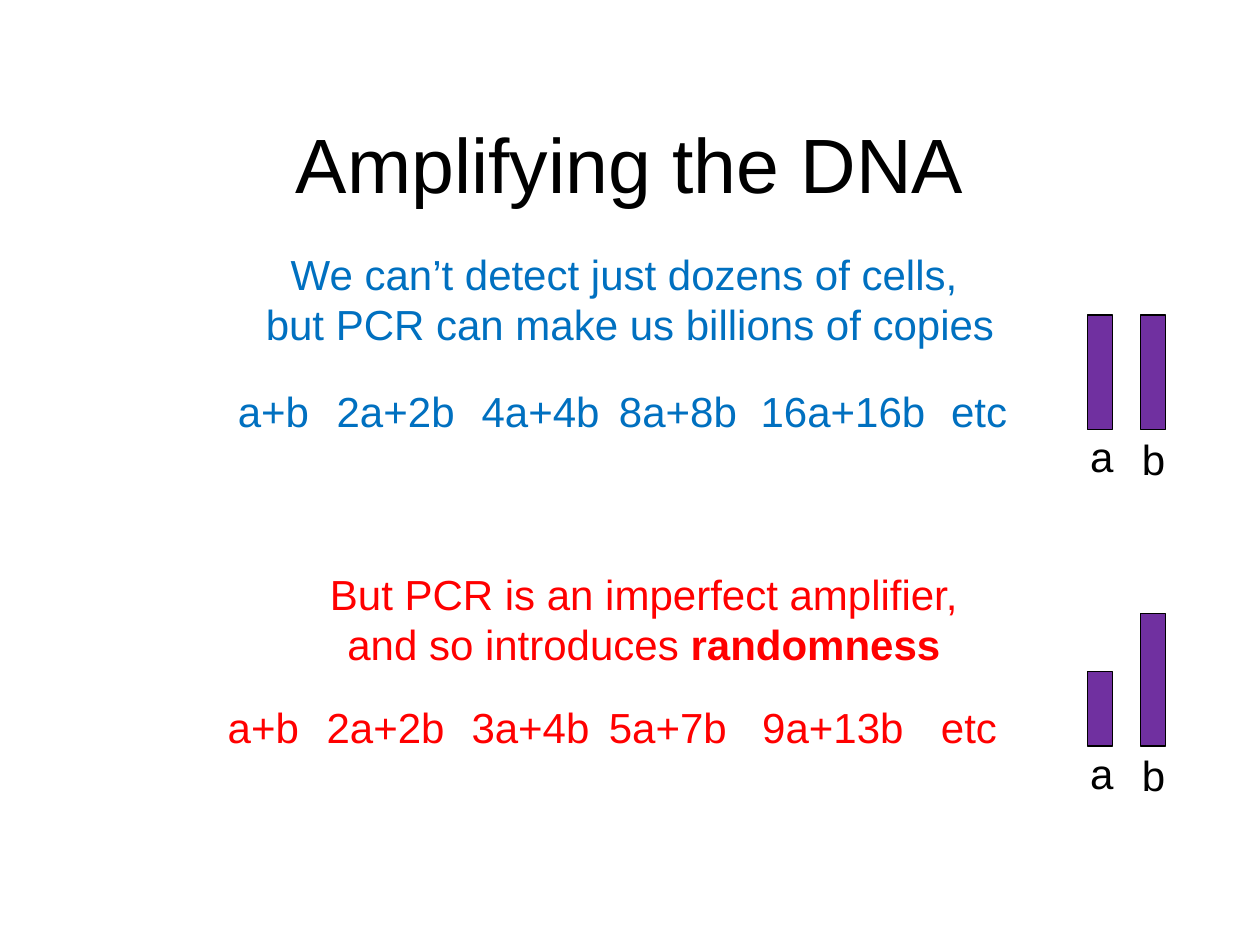
from pptx import Presentation
from pptx.dml.color import RGBColor
from pptx.enum import shapes, text
from pptx.util import Inches, Pt

COLORS = {"black": "000000", "blue": "0070C0", "red": "FF0000", "purple": "7030A0"}
FONT = "Arial"
CYCLE_CENTERS = (0.38, 1.35, 2.5, 3.59, 4.9, 5.98)


def rgb(name):
    return RGBColor.from_string(COLORS[name])


def style(p, size, color):
    p.alignment = text.PP_ALIGN.CENTER
    p.font.name = FONT
    p.font.size = Pt(size)
    p.font.color.rgb = rgb(color)


def add_title(s, title, left, top, width, height):
    sp = s.shapes.title
    sp.left, sp.top = Inches(left), Inches(top)
    sp.width, sp.height = Inches(width), Inches(height)
    tf = sp.text_frame
    tf.text = title
    tf.vertical_anchor = text.MSO_ANCHOR.MIDDLE
    style(tf.paragraphs[0], 44, "black")


def add_label(s, lines, left, top, width, height, color):
    """Add centred lines; each line is a list of (text, bold) runs."""
    sp = s.shapes.add_textbox(Inches(left), Inches(top), Inches(width), Inches(height))
    tf = sp.text_frame
    tf.word_wrap = False
    tf.auto_size = text.MSO_AUTO_SIZE.SHAPE_TO_FIT_TEXT
    for i, runs in enumerate(lines):
        p = tf.add_paragraph() if i else tf.paragraphs[0]
        style(p, 24, color)
        for words, bold in runs:
            r = p.add_run()
            r.text = words
            if bold:
                r.font.bold = True


def add_cycles(s, left, top, cycles, color):
    """Add the row of amplification products, each centred on its column."""
    for center, (words, width) in zip(CYCLE_CENTERS, cycles):
        add_label(s, [[(words, False)]], left + center - width / 2, top, width, 0.5, color)


def add_peaks(s, left, base, heights):
    """Add the bars a and b standing on a base line, with their names below."""
    for i, (name, height) in enumerate(zip("ab", heights)):
        x = left + 0.42 * i
        sp = s.shapes.add_shape(shapes.MSO_SHAPE.RECTANGLE, Inches(x),
                                Inches(base - height), Inches(0.2), Inches(height))
        sp.shadow.inherit = False
        sp.fill.solid()
        sp.fill.fore_color.rgb = rgb("purple")
        sp.line.color.rgb = rgb("black")
        sp.line.width = Pt(0.75)
        add_label(s, [[(name, False)]], left - 0.08 + 0.41 * i,
                  base - 0.04 + 0.02 * i, 0.39, 0.5, "black")


def main():
    prs = Presentation()
    prs.slide_width, prs.slide_height = Inches(10), Inches(7.5)
    s = prs.slides.add_slide(prs.slide_layouts[5])
    add_title(s, "Amplifying the DNA", 0.75, 0.67, 8.5, 1.25)

    add_label(s, [[("We can’t detect just dozens of cells, ", False)],
                  [("but PCR can make us billions of copies", False)]],
              1.98, 1.92, 6.04, 0.91, "blue")
    add_cycles(s, 1.79, 3.01, [("a+b", 0.77), ("2a+2b", 1.15), ("4a+4b", 1.15),
                               ("8a+8b", 1.15), ("16a+16b", 1.52), ("etc", 0.65)], "blue")
    add_peaks(s, 8.63, 3.41, (0.91, 0.91))

    add_label(s, [[("But PCR is an imperfect amplifier,", False)],
                  [("and so introduces ", False), ("randomness", True)]],
              2.49, 4.46, 5.24, 0.91, "red")
    add_cycles(s, 1.71, 5.52, [("a+b", 0.77), ("2a+2b", 1.15), ("3a+4b", 1.15),
                               ("5a+7b", 1.15), ("9a+13b", 1.34), ("etc", 0.65)], "red")
    add_peaks(s, 8.63, 5.92, (0.59, 1.05))

    prs.save("out.pptx")


if __name__ == "__main__":
    main()
